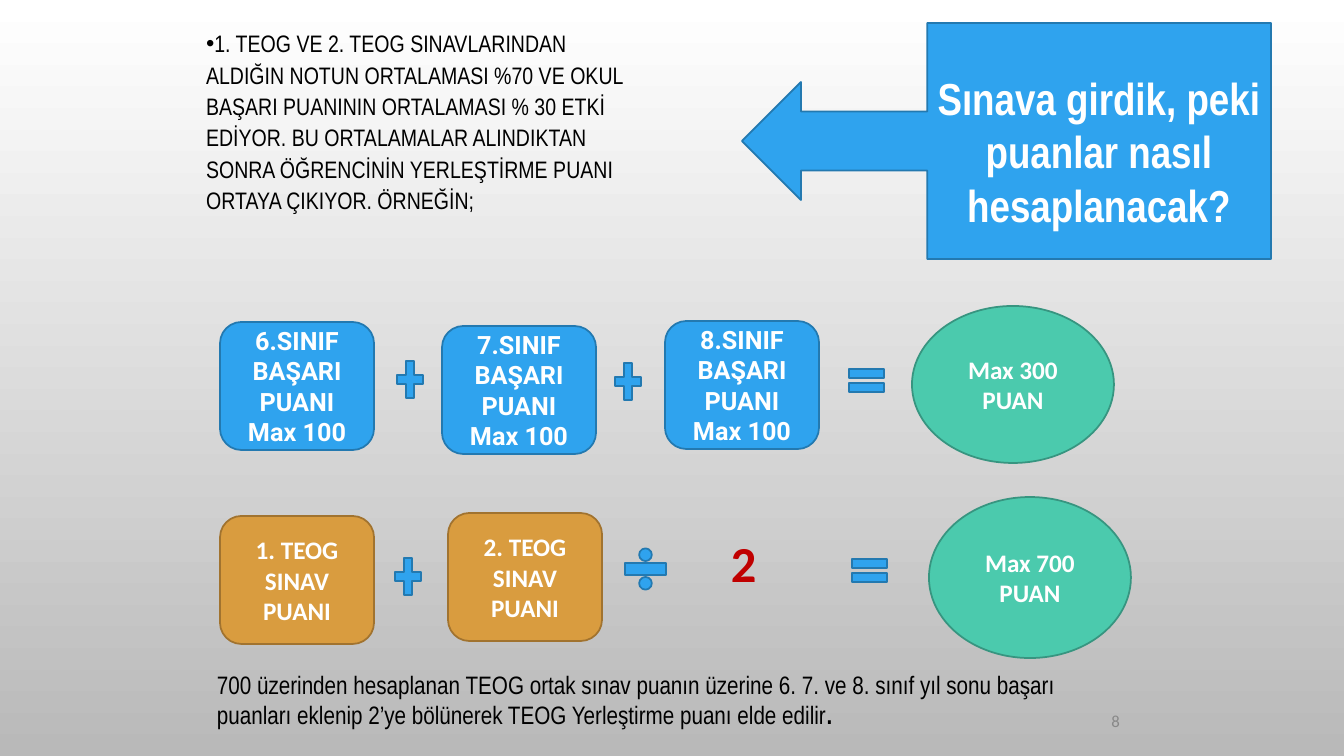
from lxml.etree import SubElement
from pptx import Presentation
from pptx.dml.color import RGBColor
from pptx.enum.shapes import MSO_SHAPE
from pptx.enum.text import MSO_ANCHOR, MSO_AUTO_SIZE, PP_ALIGN
from pptx.oxml.ns import qn
from pptx.util import Pt

SCALE = 914400 / 100.8
BLUE, GOLD, GREEN = ("2FA3EE", "2379B0"), ("D99C3F", "A1732F"), ("4BCAAD", "379580")
CARD = (154, 128)
PLUS = (36, 51)
EQUAL = (47, 39)


def px(length):
    """Turn pixels into EMU."""
    return round(length * SCALE)


def color(value):
    """Turn a hex string into a colour."""
    return RGBColor.from_string(value)


def style(run, size, font, ink, bold=False):
    """Set the font of one run."""
    run.font.size = Pt(size)
    run.font.name = font
    run.font.color.rgb = color(ink)
    run.font.bold = bold


def add_figure(slide, preset, box, colors, text="", font="Calibri", size=18):
    """Add a filled, outlined preset shape with bold white centred text."""
    figure = slide.shapes.add_shape(preset, *map(px, box))
    figure.shadow.inherit = False
    fill, outline = colors
    figure.fill.solid()
    figure.fill.fore_color.rgb = color(fill)
    figure.line.color.rgb = color(outline)
    figure.line.width = Pt(1.25)
    if text:
        frame = figure.text_frame
        frame.text = text
        frame.word_wrap = True
        frame.vertical_anchor = MSO_ANCHOR.MIDDLE
        for paragraph in frame.paragraphs:
            paragraph.alignment = PP_ALIGN.CENTER
            for run in paragraph.runs:
                style(run, size, font, "FFFFFF", True)
    return figure


def add_label(slide, box, text, size, font, ink, bold=False):
    """Add a wrapped text box and return its paragraph."""
    frame = slide.shapes.add_textbox(*map(px, box)).text_frame
    frame.word_wrap = True
    frame.text = text
    paragraph = frame.paragraphs[0]
    style(paragraph.runs[0], size, font, ink, bold)
    return paragraph


def add_background(slide):
    """Fill the slide from white at the top to grey at the bottom."""
    fill = slide.background.fill
    fill.gradient()
    fill.gradient_angle = 270
    for stop, shade in zip(fill.gradient_stops, ("FFFFFF", "B9B9B9")):
        stop.color.rgb = color(shade)


def add_explanation(slide, box):
    """Put the weighting rule into the body placeholder."""
    body = slide.placeholders[1]
    body.left, body.top, body.width, body.height = map(px, box)
    frame = body.text_frame
    frame.text = (
        "1. TEOG VE 2. TEOG SINAVLARINDAN ALDIĞIN NOTUN ORTALAMASI %70 VE OKUL "
        "BAŞARI PUANININ ORTALAMASI % 30 ETKİ EDİYOR. BU ORTALAMALAR ALINDIKTAN "
        "SONRA ÖĞRENCİNİN YERLEŞTİRME PUANI ORTAYA ÇIKIYOR. ÖRNEĞİN;"
    )
    frame.word_wrap = True
    frame.auto_size = MSO_AUTO_SIZE.NONE
    frame.vertical_anchor = MSO_ANCHOR.TOP
    rule = frame.paragraphs[0]
    properties = rule._p.get_or_add_pPr()
    properties.set("marL", "0")
    properties.set("indent", "0")
    bullet_color = SubElement(properties, qn("a:buClr"))
    SubElement(bullet_color, qn("a:srgbClr")).set("val", "000000")
    SubElement(properties, qn("a:buFont")).set("typeface", "Arial")
    SubElement(properties, qn("a:buChar")).set("char", "•")
    rule.line_spacing = 1.1
    rule.space_before = Pt(0)
    style(rule.runs[0], 17, "Arial Narrow", "000000")


def add_question(slide, box):
    """Add the arrow callout that asks the question."""
    question = add_figure(slide, MSO_SHAPE.LEFT_ARROW_CALLOUT, box, BLUE,
                          "Sınava girdik, peki puanlar nasıl hesaplanacak?",
                          "Arial Narrow", 32)
    question.text_frame.margin_top = px(25)


def add_school_row(slide, box):
    """Add the sum of the three school-year scores."""
    left, top, width, height = box
    for grade, x, y in ((6, 0, 16), (7, 222, 20), (8, 445, 15)):
        add_figure(slide, MSO_SHAPE.ROUNDED_RECTANGLE, (left + x, top + y, *CARD), BLUE,
                   f"{grade}.SINIF BAŞARI PUANI\nMax 100", "Roboto")
    for x, y in ((172, 48), (390, 50)):
        add_figure(slide, MSO_SHAPE.MATH_PLUS, (left + x, top + y, *PLUS), BLUE)
    add_figure(slide, MSO_SHAPE.MATH_EQUAL, (left + 623, top + 55, *EQUAL), BLUE)
    add_figure(slide, MSO_SHAPE.OVAL, (left + width - 202, top, 202, height), GREEN,
               "Max 300 PUAN")


def add_exam_row(slide, box):
    """Add the average of the two exam scores."""
    left, top, width, height = box
    for exam, x, y in ((1, 0, 19), (2, 228, 16)):
        add_figure(slide, MSO_SHAPE.ROUNDED_RECTANGLE, (left + x, top + y, *CARD), GOLD,
                   f"{exam}. TEOG SINAV PUANI")
    add_figure(slide, MSO_SHAPE.MATH_PLUS, (left + 170, top + 54, *PLUS), BLUE)
    add_figure(slide, MSO_SHAPE.MATH_DIVIDE, (left + 398, top + 45, 55, 54), BLUE)
    add_label(slide, (left + 501, top + 30, 43, 71), "2", 36, "Calibri", "C00000", True)
    add_figure(slide, MSO_SHAPE.MATH_EQUAL, (left + 626, top + 54, *EQUAL), BLUE)
    add_figure(slide, MSO_SHAPE.OVAL, (left + width - 202, top, 202, height), GREEN,
               "Max 700 PUAN")


def add_conclusion(slide, box):
    """Add the closing sentence with its bold full stop."""
    sentence = add_label(
        slide, box,
        "700 üzerinden hesaplanan TEOG ortak sınav puanın üzerine 6. 7. ve 8. sınıf yıl "
        "sonu başarı puanları eklenip 2’ye bölünerek TEOG Yerleştirme puanı elde edilir",
        18, "Arial Narrow", "000000")
    full_stop = sentence.add_run()
    full_stop.text = "."
    style(full_stop, 18, "Arial Narrow", "000000", True)


def add_page_number(slide, box):
    """Add the page number at the right of its box."""
    number = add_label(slide, box, "8", 12, "Calibri", "888888")
    number.alignment = PP_ALIGN.RIGHT
    frame = slide.shapes[-1].text_frame
    frame.vertical_anchor = MSO_ANCHOR.MIDDLE
    frame.margin_left = frame.margin_right = px(5)


def main():
    """Build the slide and save it."""
    deck = Presentation()
    deck.slide_width, deck.slide_height = px(1344), px(756)
    slide = deck.slides.add_slide(deck.slide_layouts[1])
    title = slide.shapes.title.element
    title.getparent().remove(title)
    add_background(slide)
    add_page_number(slide, (890, 706, 235, 29))
    add_explanation(slide, (196, 21, 445, 230))
    add_school_row(slide, (220, 306, 894, 157))
    add_exam_row(slide, (220, 497, 911, 161))
    add_conclusion(slide, (207, 664, 863, 72))
    add_question(slide, (742, 23, 529, 236))
    deck.save("out.pptx")


if __name__ == "__main__":
    main()
